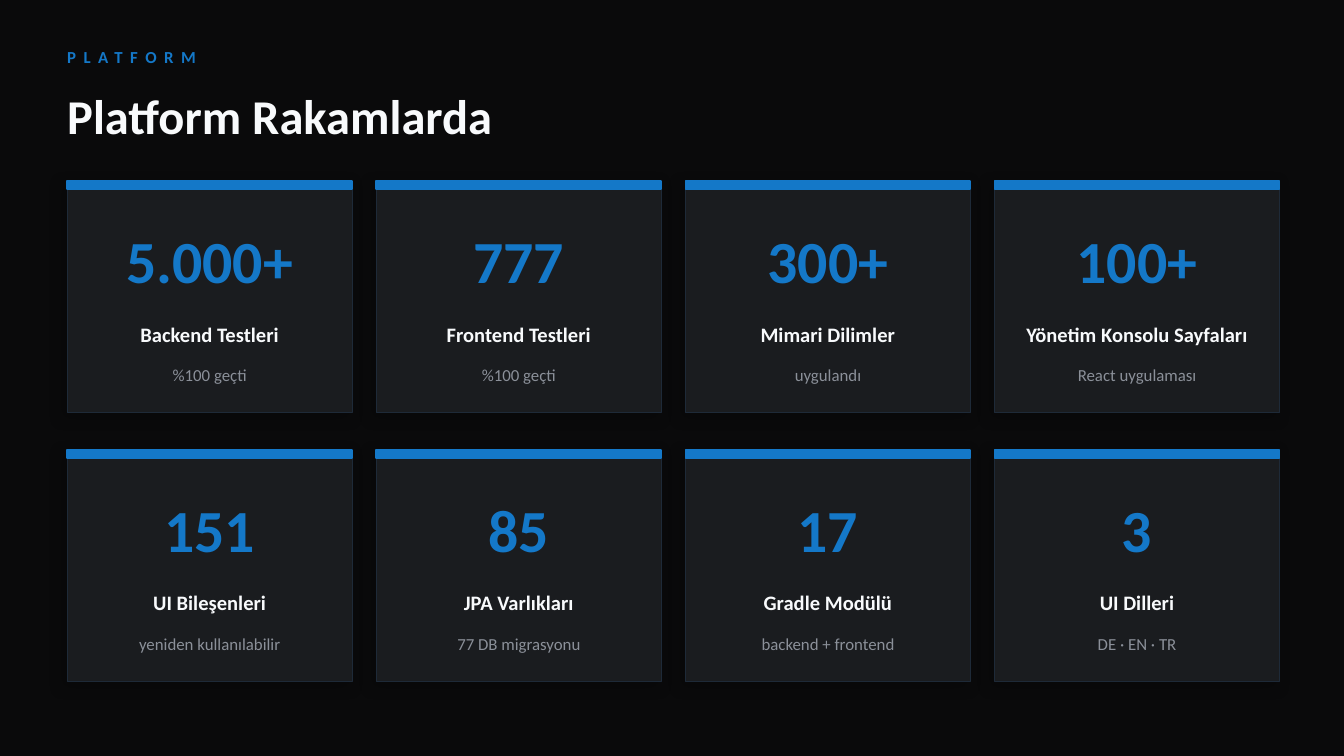
"""Build the platform figures slide: a heading above a four-by-two grid of metric cards."""
import pptx
import pptx.dml.color
import pptx.enum.shapes
import pptx.enum.text
import pptx.oxml
import pptx.oxml.ns
import pptx.util

Pt = pptx.util.Pt
RGB = pptx.dml.color.RGBColor.from_string
ALIGN = pptx.enum.text.PP_ALIGN
RECTANGLE = pptx.enum.shapes.MSO_SHAPE.RECTANGLE

COLORS = {
    "background": "0A0A0B",
    "accent": "1478C8",
    "heading": "F8FAFC",
    "card": "1A1C1F",
    "border": "1E2A38",
    "muted": "8B9099",
    "shadow": "000000",
}
FRAME_FORMAT = {
    "margin_left": 0,
    "margin_top": 0,
    "margin_right": 0,
    "margin_bottom": 0,
    "word_wrap": True,
    "auto_size": pptx.enum.text.MSO_AUTO_SIZE.NONE,
    "vertical_anchor": pptx.enum.text.MSO_ANCHOR.MIDDLE,
}
SHADOW = (
    f'<a:outerShdw {pptx.oxml.ns.nsdecls("a")} blurRad="{Pt(8)}" dist="{Pt(3)}" '
    f'dir="8100000" algn="bl" rotWithShape="0"><a:srgbClr val="{COLORS["shadow"]}">'
    '<a:alpha val="25000"/></a:srgbClr></a:outerShdw>'
)
CARDS = [
    ("5.000+", "Backend Testleri", "%100 geçti"),
    ("777", "Frontend Testleri", "%100 geçti"),
    ("300+", "Mimari Dilimler", "uygulandı"),
    ("100+", "Yönetim Konsolu Sayfaları", "React uygulaması"),
    ("151", "UI Bileşenleri", "yeniden kullanılabilir"),
    ("85", "JPA Varlıkları", "77 DB migrasyonu"),
    ("17", "Gradle Modülü", "backend + frontend"),
    ("3", "UI Dilleri", "DE · EN · TR"),
]
CARD_LINES = [
    (15.84, 51.84, 32, "accent", True),
    (69.12, 25.2, 11, "heading", True),
    (93.6, 20.16, 9, "muted", False),
]
COLUMNS = 4
MARGIN, GRID_TOP = 36, 97.2
COLUMN_STEP, ROW_STEP = 165.6, 144
CARD_WIDTH, CARD_HEIGHT = 152.64, 123.84
BAR_HEIGHT, PADDING = 4.32, 7.2


def write(box, text, size, color, bold=True, align=ALIGN.LEFT):
    for name, value in FRAME_FORMAT.items():
        setattr(box.text_frame, name, value)
    paragraph = box.text_frame.paragraphs[0]
    paragraph.alignment = align
    run = paragraph.add_run()
    run.text = text
    for name, value in {"name": "Calibri", "size": Pt(size), "bold": bold}.items():
        setattr(run.font, name, value)
    run.font.color.rgb = RGB(COLORS[color])
    return run


def add_panel(left, top, height, fill, line, line_width):
    panel = slide.shapes.add_shape(RECTANGLE, Pt(left), Pt(top), Pt(CARD_WIDTH), Pt(height))
    panel.shadow.inherit = False
    panel.fill.solid()
    panel.fill.fore_color.rgb = RGB(COLORS[fill])
    panel.line.color.rgb = RGB(COLORS[line])
    panel.line.width = Pt(line_width)
    return panel


deck = pptx.Presentation()
deck.slide_width, deck.slide_height = Pt(720), Pt(405)
slide = deck.slides.add_slide(deck.slide_layouts.get_by_name("Title Only"))
slide.background.fill.solid()
slide.background.fill.fore_color.rgb = RGB(COLORS["background"])

eyebrow = slide.shapes.add_textbox(Pt(MARGIN), Pt(21.6), Pt(360), Pt(18))
eyebrow_run = write(eyebrow, "PLATFORM", 9, "accent")
eyebrow_run.font._element.set("spc", "400")

heading = slide.shapes.title
heading_place = {"left": MARGIN, "top": 41.76, "width": 648, "height": 39.6}
for name, value in heading_place.items():
    setattr(heading, name, Pt(value))
write(heading, "Platform Rakamlarda", 26, "heading")

for index, card_texts in enumerate(CARDS):
    row, column = divmod(index, COLUMNS)
    left = MARGIN + column * COLUMN_STEP
    top = GRID_TOP + row * ROW_STEP
    card = add_panel(left, top, CARD_HEIGHT, "card", "border", 0.5)
    effects = card._element.spPr.find(pptx.oxml.ns.qn("a:effectLst"))
    effects.append(pptx.oxml.parse_xml(SHADOW))
    add_panel(left, top, BAR_HEIGHT, "accent", "accent", 1)
    for text, (offset, height, size, color, bold) in zip(card_texts, CARD_LINES):
        caption = slide.shapes.add_textbox(
            Pt(left + PADDING), Pt(top + offset), Pt(CARD_WIDTH - 2 * PADDING), Pt(height)
        )
        write(caption, text, size, color, bold, ALIGN.CENTER)

deck.save("out.pptx")
